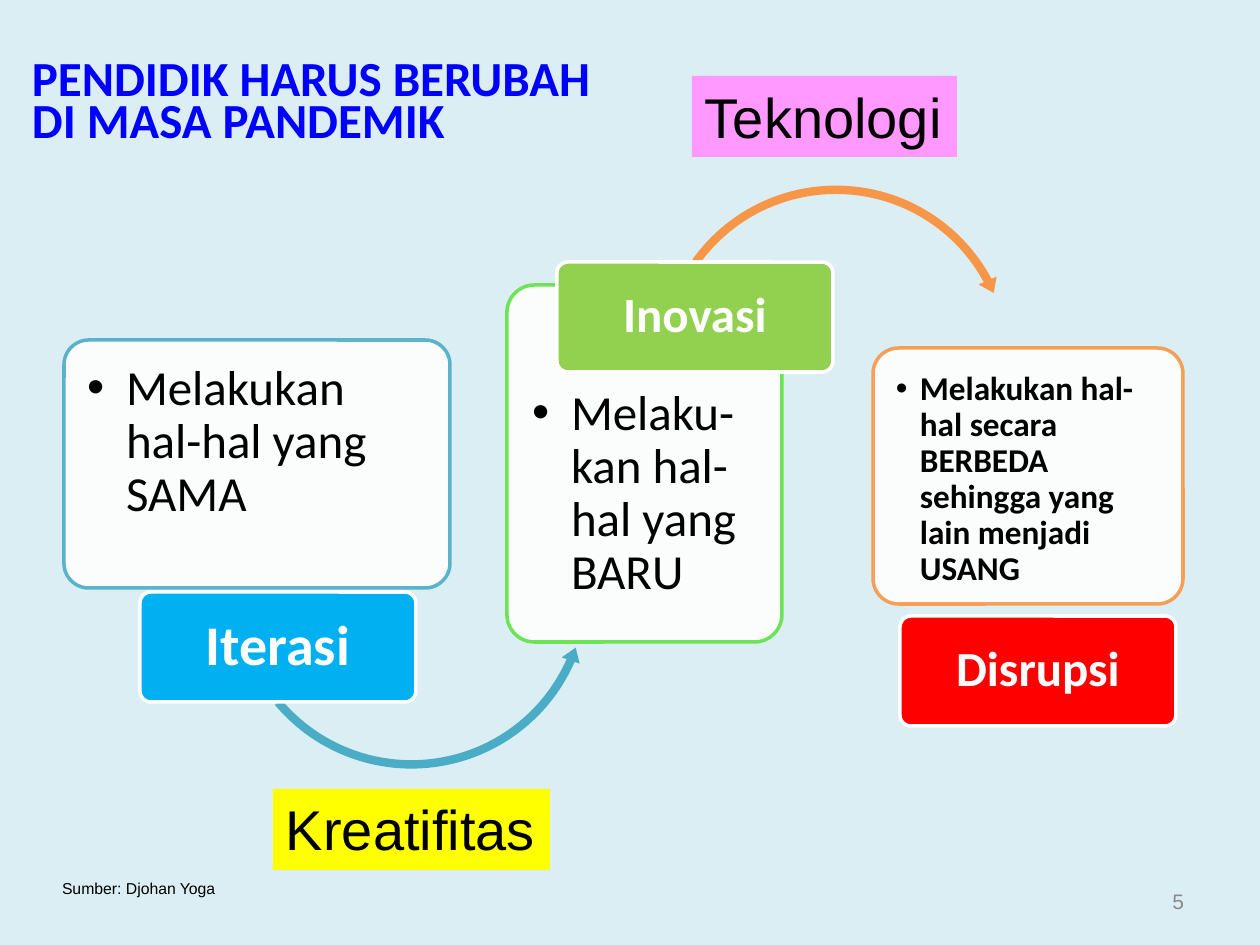
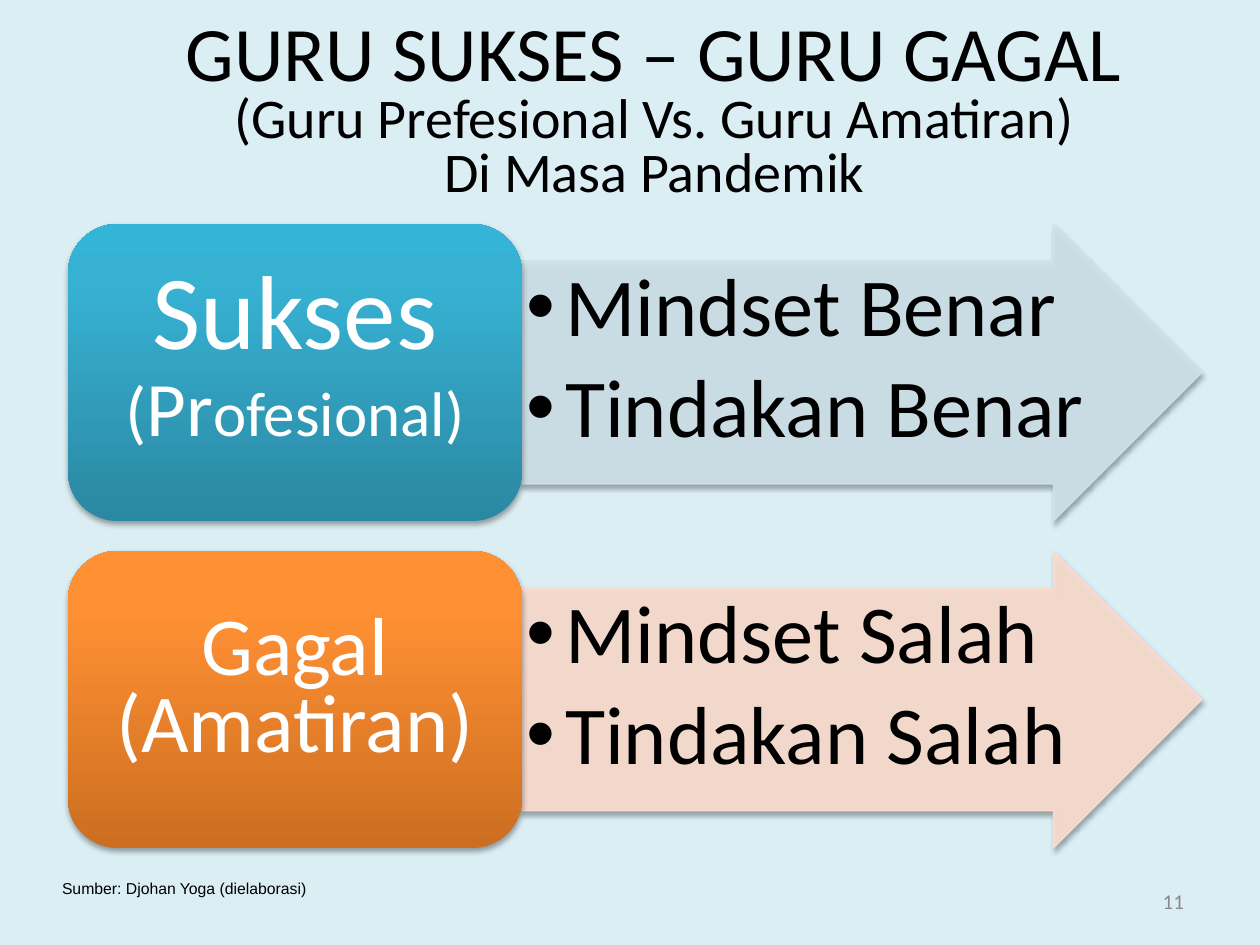
import copy
from dataclasses import dataclass

import pptx
import pptx.util
import pptx.dml.color
import pptx.enum.shapes
import pptx.enum.text
import pptx.oxml
import pptx.oxml.ns
from lxml import etree

FORM = pptx.enum.shapes.MSO_SHAPE
ALIGN = pptx.enum.text.PP_ALIGN
ANCHOR = pptx.enum.text.MSO_ANCHOR
FIT = pptx.enum.text.MSO_AUTO_SIZE
SCALE = 914400 / 126  # EMU in one px


@dataclass(frozen=True)
class Theme:
    # Colours
    back: str = "DBEEF4"
    black: str = "000000"
    white: str = "FFFFFF"
    blue: str = "0000FF"
    grey: str = "898989"
    teal: str = "4BACC6"
    sky: str = "00B0F0"
    lime: str = "60E146"
    green: str = "92D050"
    orange: str = "F79646"
    red: str = "FF0000"
    yellow: str = "FFFF00"
    pink: str = "FF99FF"
    ice: str = "D0E3EA"
    peach: str = "FCDDCF"
    ocean: tuple = ((0, "2A88A2"), (0.8, "37B1D2"), (1, "34B4D6"))
    flame: tuple = ((0, "CC6E20"), (0.8, "FF9034"), (1, "FF9136"))
    # Fonts and sizes in points
    main: str = "Calibri"
    plain: str = "Arial"
    note: int = 9
    page: int = 12
    small: int = 19
    text: int = 28
    label: int = 32
    head: int = 44
    big: int = 47
    huge: int = 60


T = Theme()


def px(n):
    return pptx.util.Emu(round(n * SCALE))


def rgb(code):
    return pptx.dml.color.RGBColor.from_string(code)


# Fills, lines and shadows

def paint(fill, code, alpha=None):
    fill.solid()
    fill.fore_color.rgb = rgb(code)
    return alpha


def fade(shape, share):
    """Set the opacity of every plain colour in the shape's fill and line."""
    for node in shape.element.spPr.iter(pptx.oxml.ns.qn("a:srgbClr")):
        etree.SubElement(node, pptx.oxml.ns.qn("a:alpha")).set("val", str(share * 1000))


def blend(shape, stops):
    shape.fill.gradient()
    shape.fill.gradient_angle = 90
    first = next(shape.element.spPr.iter(pptx.oxml.ns.qn("a:gs")))
    first.addnext(copy.deepcopy(first))
    for stop, (place, code) in zip(shape.fill.gradient_stops, stops):
        stop.position = place
        stop.color.rgb = rgb(code)


def shade(shape):
    effect = shape.element.spPr.find(pptx.oxml.ns.qn("a:effectLst"))
    effect.append(pptx.oxml.parse_xml(
        f'<a:outerShdw {pptx.oxml.ns.nsdecls("a")} blurRad="39370" dist="22860" '
        'dir="5400000" rotWithShape="0"><a:srgbClr val="000000">'
        '<a:alpha val="35000"/></a:srgbClr></a:outerShdw>'))


def draw(slide, form, box, fill=None, line=None, width=2, adjust=()):
    shape = slide.shapes.add_shape(form, *map(px, box))
    shape.shadow.inherit = False
    for i, value in enumerate(adjust):
        shape.adjustments[i] = value
    if fill:
        paint(shape.fill, fill)
    if line:
        paint(shape.line.fill, line)
        shape.line.width = pptx.util.Pt(width)
    else:
        shape.line.fill.background()
    return shape


# Text

def dot(para, indent):
    props = para._p.get_or_add_pPr()
    props.set("marL", str(px(indent)))
    props.set("indent", str(-px(indent)))
    for tag, key, value in (("a:buFont", "typeface", T.plain), ("a:buChar", "char", "•")):
        etree.SubElement(props, pptx.oxml.ns.qn(tag)).set(key, value)


def write(shape, paras, color=T.black, font=T.main, bold=False, align=ALIGN.LEFT,
          anchor=ANCHOR.TOP, inset=(13, 6), wrap=True, lead=1.0, after=0, indent=0):
    """Each paragraph is a list of (text, size) runs; after is a share of the size."""
    frame = shape.text_frame
    frame.auto_size = FIT.NONE if wrap else FIT.SHAPE_TO_FIT_TEXT
    frame.word_wrap = wrap
    frame.vertical_anchor = anchor
    frame.margin_left = frame.margin_right = px(inset[0])
    frame.margin_top = frame.margin_bottom = px(inset[1])
    for i, runs in enumerate(paras):
        para = frame.add_paragraph() if i else frame.paragraphs[0]
        para.alignment = align
        para.line_spacing = lead
        para.space_before = pptx.util.Pt(0)
        para.space_after = pptx.util.Pt(round(after * runs[0][1]))
        if indent:
            dot(para, indent)
        for text, size in runs:
            run = para.add_run()
            run.text = text
            run.font.size = pptx.util.Pt(size)
            run.font.name = font
            run.font.bold = bold
            run.font.color.rgb = rgb(color)


def place(shape, box):
    """Move a placeholder to its box and to the front."""
    shape.left, shape.top, shape.width, shape.height = map(px, box)
    shape.element.getparent().append(shape.element)


def title(slide, box, paras, **style):
    shape = slide.shapes.title
    place(shape, box)
    write(shape, paras, wrap=False, **style)


def points(holder, box, lines, size, inset, indent=39, bold=False):
    place(holder, box)
    write(holder, [[(line, size)] for line in lines], bold=bold,
          inset=(inset, inset), lead=0.9, after=0.15, indent=indent)


def footer(slide, source, width, number, font):
    note = slide.shapes.add_textbox(*map(px, (49, 873, width, 32)))
    write(note, [[(source, T.note)]], font=T.plain, wrap=False)
    page = slide.shapes.add_textbox(*map(px, (903, 876, 294, 50)))
    write(page, [[(number, T.page)]], T.grey, font, align=ALIGN.RIGHT, anchor=ANCHOR.MIDDLE)


# Parts of the change diagram

def card(slide, box, line):
    fade(draw(slide, FORM.ROUNDED_RECTANGLE, box, T.white, line, adjust=[0.1]), 90)


def tag(slide, x, y, text, fill, size=T.text):
    shape = draw(slide, FORM.ROUNDED_RECTANGLE, (x, y, 276, 110), fill, T.white, adjust=[0.1])
    write(shape, [[(text, size)]], T.white, bold=True, align=ALIGN.CENTER,
          anchor=ANCHOR.MIDDLE, inset=(8, 5), lead=0.9)


def label(slide, box, text, fill):
    shape = draw(slide, FORM.RECTANGLE, box, fill)
    write(shape, [[(text, T.label)]], font=T.plain, wrap=False)


def change(deck):
    slide = deck.slides.add_slide(deck.slide_layouts.get_by_name("Comparison"))
    same, fresh, other, spare = list(slide.placeholders)[1:]
    spare.element.getparent().remove(spare.element)

    card(slide, (64, 340, 386, 248), T.teal)
    points(same, (69, 345, 374, 183), ["Melakukan hal-hal yang SAMA"], T.text, 18)
    draw(slide, FORM.LEFT_CIRCULAR_ARROW, (228, 407, 367, 367), T.teal,
         adjust=[0.023, 2.74, 14.25, 84, 0.026])
    tag(slide, 140, 592, "Iterasi", T.sky, T.label)

    card(slide, (507, 285, 275, 357), T.lime)
    points(fresh, (514, 370, 258, 265), ["Melaku-kan hal-hal yang BARU"], T.text, 18)
    draw(slide, FORM.CIRCULAR_ARROW, (654, 180, 364, 364), T.orange,
         adjust=[0.023, 2.75, 199.07, 129.33, 0.027])
    tag(slide, 557, 262, "Inovasi", T.green)

    card(slide, (873, 348, 310, 256), T.orange)
    points(other, (878, 354, 299, 189),
           ["Melakukan hal-hal secara BERBEDA sehingga yang lain menjadi USANG"],
           T.small, 18, indent=24, bold=True)
    tag(slide, 900, 616, "Disrupsi", T.red)

    label(slide, (273, 789, 277, 81), "Kreatifitas", T.yellow)
    label(slide, (692, 76, 265, 81), "Teknologi", T.pink)
    footer(slide, "Sumber: Djohan Yoga", 180, "5", T.plain)
    title(slide, (19, 58, 592, 98),
          [[("PENDIDIK HARUS BERUBAH", T.text)], [("DI MASA PANDEMIK", T.text)]],
          color=T.blue, bold=True, lead=0.7)


# Rows of the teacher types

def row(slide, holder, y, name, stops, lines, tint):
    arrow = draw(slide, FORM.RIGHT_ARROW, (522, y, 680, 297), tint, tint, 0.75, [0.75, 0.5])
    fade(arrow, 90)
    shade(arrow)
    points(holder, (522, y + 37, 570, 223), lines, T.big, 4)
    block = draw(slide, FORM.ROUNDED_RECTANGLE, (68, y, 454, 297))
    blend(block, stops)
    shade(block)
    write(block, name, T.white, align=ALIGN.CENTER, anchor=ANCHOR.MIDDLE,
          inset=(25, 13), lead=0.5, after=0.35)


def teachers(deck):
    slide = deck.slides.add_slide(deck.slide_layouts.get_by_name("Two Content"))
    rows = (
        ([[("Sukses", T.huge)], [("(", 40), ("Pr", T.head), ("ofesional)", 36)]],
         T.ocean, ["Mindset Benar", "Tindakan Benar"], T.ice),
        ([[("Gagal", T.big)], [("(Amatiran)", T.big)]],
         T.flame, ["Mindset Salah", "Tindakan Salah"], T.peach),
    )
    holders = list(slide.placeholders)[1:]
    for i, (holder, parts) in enumerate(zip(holders, rows)):
        row(slide, holder, 224 + 327 * i, *parts)
    footer(slide, "Sumber: Djohan Yoga (dielaborasi)", 273, "11", T.main)
    title(slide, (168, 16, 973, 198),
          [[("GURU SUKSES – GURU GAGAL", T.head)],
           [("(Guru Prefesional Vs. Guru Amatiran)", T.label)],
           [("Di Masa Pandemik", T.label)]],
          align=ALIGN.CENTER, lead=0.8)


def main():
    deck = pptx.Presentation()
    deck.slide_width, deck.slide_height = px(1260), px(945)
    paint(deck.slide_master.background.fill, T.back)
    change(deck)
    teachers(deck)
    deck.save("out.pptx")


if __name__ == "__main__":
    main()
